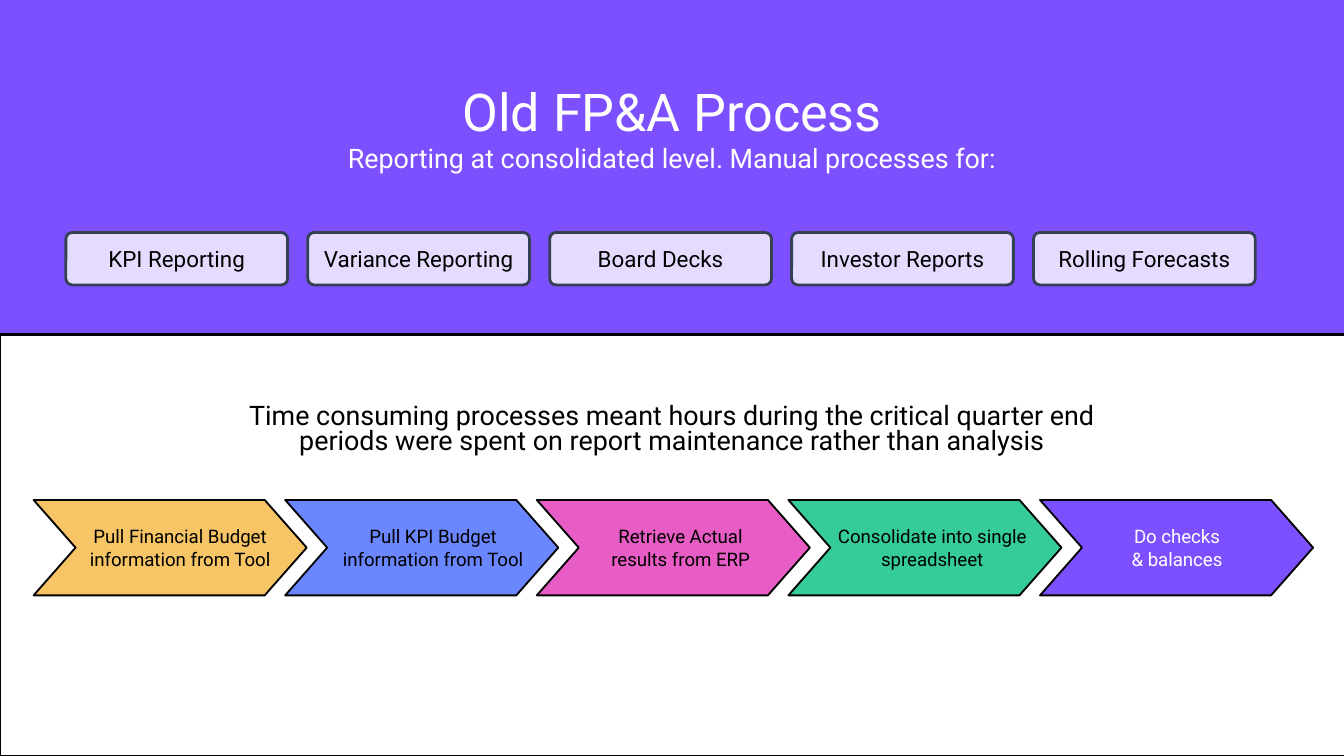
"""Build the slide that sums up the old FP&A process."""
import pptx
import pptx.dml.color
import pptx.enum.shapes
import pptx.enum.text
import pptx.util

Inches = pptx.util.Inches
Pt = pptx.util.Pt
RGB = pptx.dml.color.RGBColor
SHAPE = pptx.enum.shapes.MSO_SHAPE
ANCHOR = pptx.enum.text.MSO_ANCHOR

VIOLET = RGB(0x7C, 0x4F, 0xFF)
LILAC = RGB(0xE4, 0xDB, 0xFF)
SLATE = RGB(0x34, 0x40, 0x54)
AMBER = RGB(0xF7, 0xC5, 0x65)
BLUE = RGB(0x6B, 0x87, 0xFF)
PINK = RGB(0xE8, 0x5D, 0xC5)
GREEN = RGB(0x36, 0xCC, 0x99)
BLACK = RGB(0, 0, 0)
WHITE = RGB(255, 255, 255)

FONT = "Roboto"
WIDTH = 10
HEIGHT = WIDTH * 9 / 16
HEADING = "Old FP&A Process"
SUBHEADING = "Reporting at consolidated level. Manual processes for:"
MESSAGE = ("Time consuming processes meant hours during the critical quarter end "
           "periods were spent on report maintenance rather than analysis")
REPORTS = ["KPI Reporting", "Variance Reporting", "Board Decks",
           "Investor Reports", "Rolling Forecasts"]
STEPS = [
    ("Pull Financial Budget information from Tool", AMBER, BLACK, 0.26),
    ("Pull KPI Budget information from Tool", BLUE, BLACK, 0.27),
    ("Retrieve Actual\nresults from ERP", PINK, BLACK, 0.24),
    ("Consolidate into single spreadsheet", GREEN, BLACK, 0.24),
    ("Do checks\n& balances", VIOLET, WHITE, 0.19),
]


def inches(box):
    """Turn a left, top, width, height box into lengths."""
    return [Inches(length) for length in box]


def style_run(run, size, color):
    """Give a run the slide's font at a size and colour."""
    run.font.name = FONT
    run.font.size = Pt(size)
    run.font.color.rgb = color


def write(frame, text, size, color, margin=0.1, anchor=ANCHOR.TOP, spacing=1.0):
    """Fill a text frame with one centred paragraph."""
    frame.word_wrap = True
    frame.auto_size = pptx.enum.text.MSO_AUTO_SIZE.NONE
    frame.vertical_anchor = anchor
    frame.margin_left = frame.margin_right = Inches(0.1)
    frame.margin_top = frame.margin_bottom = Inches(margin)
    paragraph = frame.paragraphs[0]
    paragraph.text = text
    paragraph.alignment = pptx.enum.text.PP_ALIGN.CENTER
    paragraph.line_spacing = spacing
    for run in paragraph.runs:
        style_run(run, size, color)


def add_block(slide, preset, box, fill, line, weight):
    """Add a flat preset shape with a fill and an outline."""
    block = slide.shapes.add_shape(preset, *inches(box))
    block.shadow.inherit = False
    block.fill.solid()
    block.fill.fore_color.rgb = fill
    block.line.color.rgb = line
    block.line.width = Pt(weight)
    return block


def add_heading(slide, box):
    """Place the title with its smaller second line."""
    title = slide.shapes.title
    title.left, title.top, title.width, title.height = inches(box)
    write(title.text_frame, f"{HEADING}\n{SUBHEADING}", 27.9, WHITE)
    style_run(title.text_frame.paragraphs[0].runs[1], 14.4, WHITE)


def add_reports(slide, box, gap=0.15):
    """Spread the report labels evenly across the box."""
    left, top, width, height = box
    pitch = (width + gap) / len(REPORTS)
    for column, report in enumerate(REPORTS):
        cell = (left + column * pitch, top, pitch - gap, height)
        label = add_block(slide, SHAPE.ROUNDED_RECTANGLE, cell, LILAC, SLATE, 1.5)
        label.adjustments[0] = 0.12
        write(label.text_frame, report, 12, BLACK, anchor=ANCHOR.MIDDLE)


def add_message(slide, box):
    """Place the statement above the process."""
    message = slide.shapes.add_textbox(*inches(box))
    write(message.text_frame, MESSAGE, 14.4, BLACK, spacing=0.8)


def add_process(slide, box, overlap=0.16):
    """Interlock the step chevrons across the box and label each one."""
    left, top, width, height = box
    pitch = (width - overlap) / len(STEPS)
    for column, (step, fill, ink, indent) in enumerate(STEPS):
        x = left + column * pitch
        chevron = add_block(slide, SHAPE.CHEVRON, (x, top, pitch + overlap, height),
                            fill, BLACK, 1)
        chevron.adjustments[0] = 0.44
        label = slide.shapes.add_textbox(
            *inches((x + indent, top + 0.14, 1.66, 0.44)))
        write(label.text_frame, step, 10, ink, margin=0.05)


def main():
    """Build and save the slide."""
    deck = pptx.Presentation()
    deck.slide_width, deck.slide_height = Inches(WIDTH), Inches(HEIGHT)
    slide = deck.slides.add_slide(deck.slide_layouts[5])
    slide.background.fill.solid()
    slide.background.fill.fore_color.rgb = VIOLET
    add_block(slide, SHAPE.RECTANGLE, (0, 2.49, WIDTH + 0.02, HEIGHT - 2.49),
              WHITE, BLACK, 1.5)
    add_heading(slide, (0.2 * WIDTH, 0.49, 0.6 * WIDTH, 0.86))
    add_reports(slide, (0.49, 1.73, 8.85, 0.39))
    add_message(slide, (0.15 * WIDTH, 2.91, 0.7 * WIDTH, 0.86))
    add_process(slide, (0.25, 3.72, 9.52, 0.71))
    deck.save("out.pptx")


if __name__ == "__main__":
    main()
